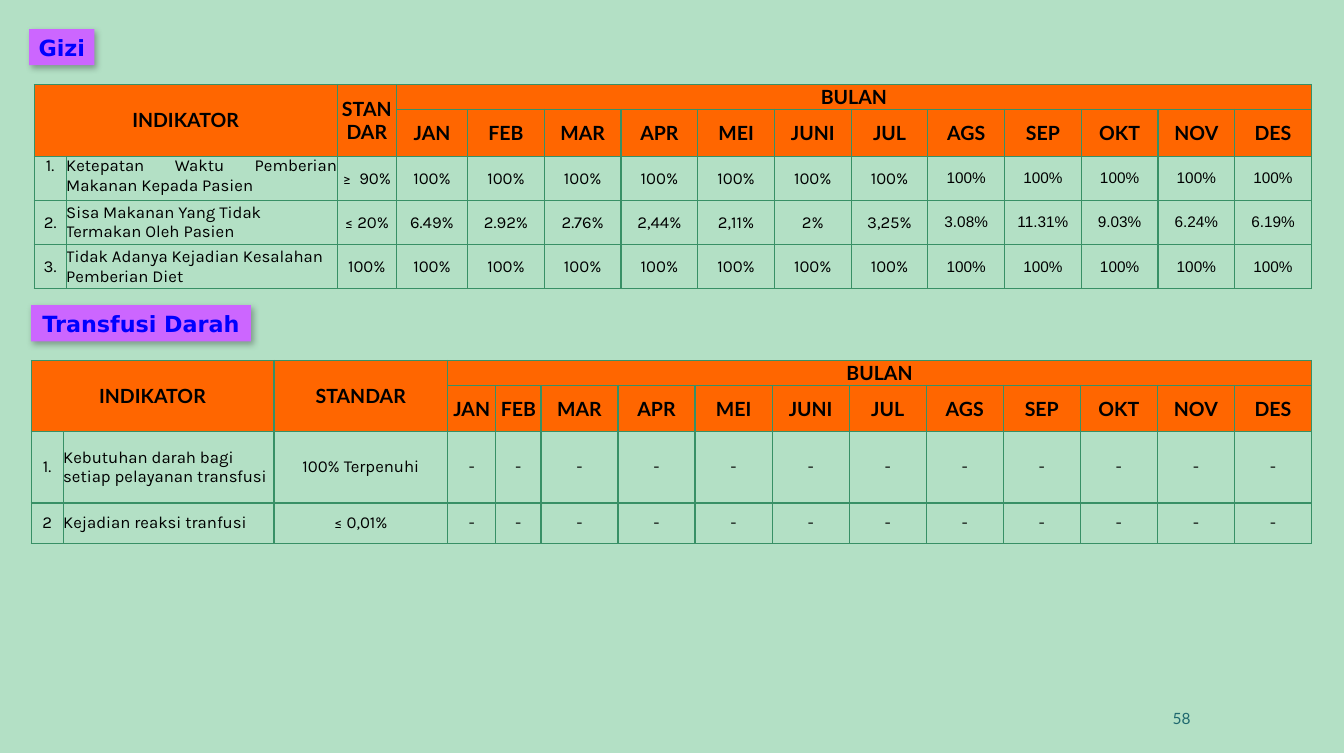
from dataclasses import dataclass

from lxml.etree import SubElement
from pptx import Presentation
from pptx.dml.color import RGBColor
from pptx.enum.shapes import MSO_SHAPE as Preset
from pptx.enum.text import MSO_ANCHOR as Anchor, MSO_AUTO_SIZE as AutoSize, PP_ALIGN as Align
from pptx.oxml.ns import qn
from pptx.util import Emu, Inches, Pt

COLORS = {
    "background": "B3E0C5",
    "header": "FF6600",
    "border": "389066",
    "label": "CC66FF",
    "title": "0000FF",
    "ink": "000000",
    "number": "1F696F",
}
GRID_COLUMNS, GRID_ROWS = 1339, 750
MONTHS = ["JAN", "FEB", "MAR", "APR", "MEI", "JUNI", "JUL", "AGS", "SEP", "OKT", "NOV", "DES"]
HEADER_ROWS, LEAD_COLUMNS = 2, 3

deck = Presentation()
deck.slide_width, deck.slide_height = Inches(13.39), Inches(7.5)


@dataclass(frozen=True)
class Area:
    left: float
    top: float
    width: float
    height: float

    def place(self) -> tuple:
        return across(self.left), down(self.top), across(self.width), down(self.height)


@dataclass(frozen=True)
class Indicator:
    number: str
    name: str
    standard: str
    values: list
    justified: bool = False


@dataclass(frozen=True)
class Section:
    title: str
    label: Area
    area: Area
    fixed_columns: list
    rows: list
    indicators: list
    small_from: int = len(MONTHS)


SECTIONS = [
    Section(
        "Gizi", Area(29, 29, 65, 36), Area(34, 84, 1273, 203),
        [32, 270, 59, 71], [25, 46, 44, 44, 44],
        [
            Indicator("1.", "Ketepatan Waktu Pemberian Makanan Kepada Pasien",
                      "≥  90%", ["100%"] * 12, justified=True),
            Indicator("2.", "Sisa Makanan Yang Tidak Termakan Oleh Pasien", "≤ 20%",
                      ["6.49%", "2.92%", "2.76%", "2,44%", "2,11%", "2%",
                       "3,25%", "3.08%", "11.31%", "9.03%", "6.24%", "6.19%"]),
            Indicator("3.", "Tidak Adanya Kejadian Kesalahan Pemberian Diet",
                      "100%", ["100%"] * 12),
        ],
        small_from=MONTHS.index("AGS"),
    ),
    Section(
        "Transfusi Darah", Area(31, 304, 219, 36), Area(31, 359, 1276, 182),
        [32, 210, 173, 48, 45], [25, 46, 71, 40],
        [
            Indicator("1.", "Kebutuhan darah bagi setiap pelayanan transfusi",
                      "100% Terpenuhi", ["-"] * 12),
            Indicator("2", "Kejadian reaksi tranfusi", "≤ 0,01%", ["-"] * 12),
        ],
    ),
]


def across(columns: float) -> Emu:
    return Emu(round(deck.slide_width * columns / GRID_COLUMNS))


def down(rows: float) -> Emu:
    return Emu(round(deck.slide_height * rows / GRID_ROWS))


def color(name: str) -> RGBColor:
    return RGBColor.from_string(COLORS[name])


def write(frame, text: str, *, size: float, font: str, ink: str = "ink",
          bold: bool = False, align=Align.CENTER) -> None:
    para = frame.paragraphs[0]
    para.alignment = align
    span = para.add_run()
    span.text = text
    span.font.size, span.font.name, span.font.bold = Pt(size), font, bold
    span.font.color.rgb = color(ink)


def add_color(parent, name: str):
    fill = SubElement(parent, qn("a:solidFill"))
    return SubElement(fill, qn("a:srgbClr"), val=COLORS[name])


def add_shadow(box) -> None:
    box.shadow.inherit = False
    effects = box._element.spPr.find(qn("a:effectLst"))
    shadow = SubElement(effects, qn("a:outerShdw"), blurRad=str(Pt(4.5)),
                        dist=str(Pt(2.6)), dir=str(53 * 60000), rotWithShape="0")
    tint = SubElement(shadow, qn("a:srgbClr"), val=COLORS["ink"])
    SubElement(tint, qn("a:alpha"), val="30000")


def add_label(page, section: Section) -> None:
    box = page.shapes.add_shape(Preset.RECTANGLE, *section.label.place())
    box.fill.solid()
    box.fill.fore_color.rgb = color("label")
    box.line.fill.background()
    add_shadow(box)
    frame = box.text_frame
    frame.word_wrap = False
    frame.auto_size = AutoSize.SHAPE_TO_FIT_TEXT
    frame.margin_left = frame.margin_right = across(9)
    frame.margin_top = frame.margin_bottom = down(4)
    write(frame, section.title, size=16, font="DejaVu Sans", ink="title", bold=True)


def prepare_cell(cell, is_header: bool) -> None:
    cell.margin_left = cell.margin_right = cell.margin_top = cell.margin_bottom = 0
    cell.vertical_anchor = Anchor.MIDDLE
    properties = cell._tc.get_or_add_tcPr()
    for side in ("a:lnL", "a:lnR", "a:lnT", "a:lnB"):
        add_color(SubElement(properties, qn(side), w=str(Pt(1))), "border")
    if is_header:
        cell.fill.solid()
        cell.fill.fore_color.rgb = color("header")
    else:
        cell.fill.background()


def fill_header(table) -> None:
    last = len(MONTHS) + LEAD_COLUMNS - 1
    headings = [("INDIKATOR", 0, (1, 1)), ("STANDAR", 2, (1, 2)), ("BULAN", LEAD_COLUMNS, (0, last))]
    for text, column, end in headings:
        table.cell(0, column).merge(table.cell(*end))
        write(table.cell(0, column).text_frame, text, size=14, font="Lato", bold=True)
    for column, month in enumerate(MONTHS, LEAD_COLUMNS):
        write(table.cell(1, column).text_frame, month, size=14, font="Lato", bold=True)


def fill_indicator(table, row: int, indicator: Indicator, small_from: int) -> None:
    name_align = Align.JUSTIFY if indicator.justified else Align.LEFT
    texts = [indicator.number, indicator.name, indicator.standard, *indicator.values]
    for column, text in enumerate(texts):
        small = column >= LEAD_COLUMNS + small_from
        cell = table.cell(row, column)
        if indicator.justified and column < 2:
            cell.vertical_anchor = Anchor.TOP
        write(cell.text_frame, text, size=11 if small else 12, font="Arial" if small else "Karla",
              align=name_align if column == 1 else Align.CENTER)


def add_indicator_table(page, section: Section) -> None:
    count = len(MONTHS) + LEAD_COLUMNS
    table = page.shapes.add_table(len(section.rows), count, *section.area.place()).table
    table.first_row = table.horz_banding = False
    equal_count = count - len(section.fixed_columns)
    equal_width = (section.area.width - sum(section.fixed_columns)) / equal_count
    for column, width in zip(table.columns, section.fixed_columns + [equal_width] * equal_count):
        column.width = across(width)
    for index, (row, height) in enumerate(zip(table.rows, section.rows)):
        row.height = down(height)
        for cell in row.cells:
            prepare_cell(cell, index < HEADER_ROWS)
    fill_header(table)
    for row, indicator in enumerate(section.indicators, HEADER_ROWS):
        fill_indicator(table, row, indicator, section.small_from)


def add_page_number(page) -> None:
    frame = page.shapes.add_textbox(*Area(884, 695, 312, 40).place()).text_frame
    frame.word_wrap = True
    frame.vertical_anchor = Anchor.MIDDLE
    write(frame, "58", size=11.1, font="Lato", ink="number", align=Align.RIGHT)


def main() -> None:
    page = deck.slides.add_slide(deck.slide_layouts[6])
    page.background.fill.solid()
    page.background.fill.fore_color.rgb = color("background")
    add_page_number(page)
    for section in SECTIONS:
        add_label(page, section)
        add_indicator_table(page, section)
    deck.save("out.pptx")


if __name__ == "__main__":
    main()
